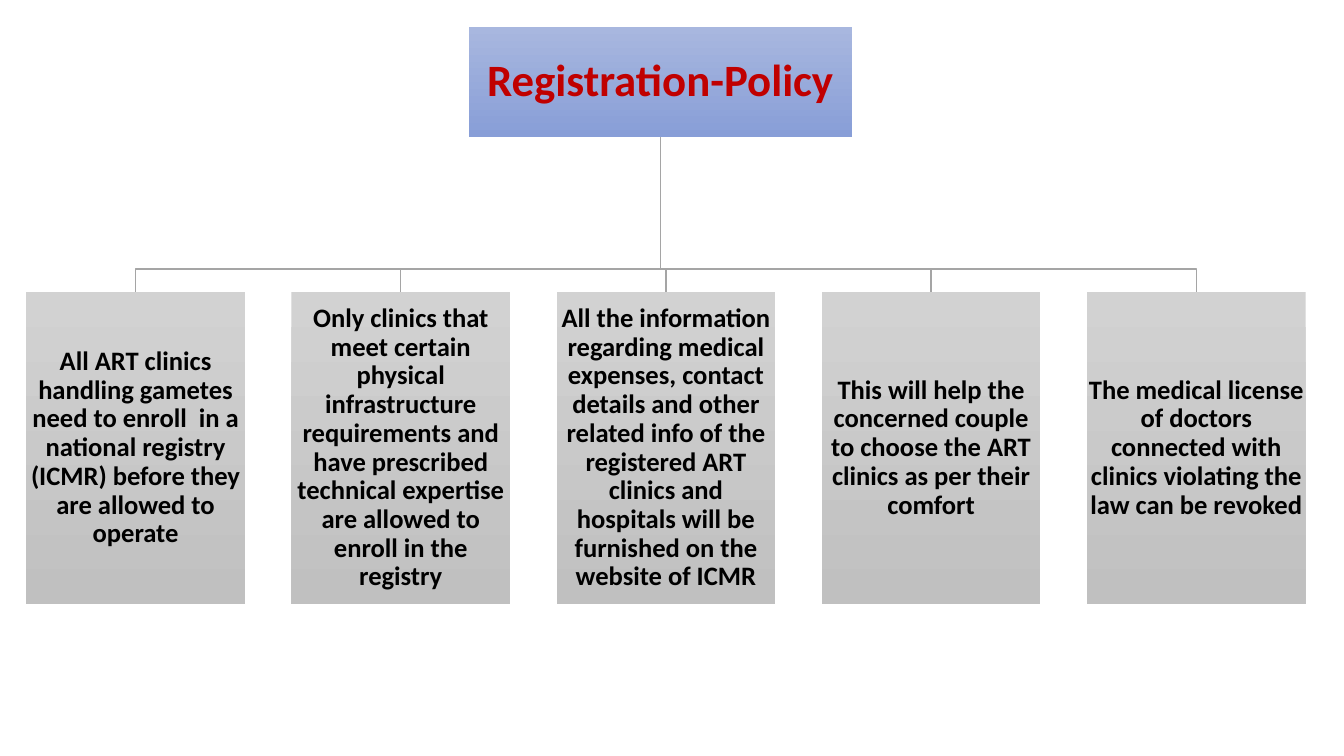
from pptx import Presentation
from pptx.dml.color import RGBColor as RGB
from pptx.enum.shapes import MSO_SHAPE as SHAPE
from pptx.enum.text import MSO_ANCHOR as ANCHOR, MSO_AUTO_SIZE as FIT, PP_ALIGN as ALIGN
from pptx.util import Inches, Pt

RED = RGB(0xC0, 0x00, 0x00)
BLACK = RGB(0x00, 0x00, 0x00)
GRAY = RGB(0xA5, 0xA5, 0xA5)
BLUES = RGB(0xA8, 0xB7, 0xDF), RGB(0x88, 0x9E, 0xD7)
GRAYS = RGB(0xD2, 0xD2, 0xD2), RGB(0xC0, 0xC0, 0xC0)

ROOT_X, ROOT_Y, ROOT_W, ROOT_H = 4.65, 0.27, 3.8, 1.09
LEFT, TOP, WIDTH, HEIGHT, STEP = 0.26, 2.9, 2.17, 3.09, 2.63
BEND = 2.67

RULES = [
    "All ART clinics handling gametes need to enroll  in a national registry (ICMR) before they are allowed to operate",
    "Only clinics that meet certain physical infrastructure requirements and have prescribed technical expertise are allowed to enroll in the registry",
    "All the information regarding medical expenses, contact details and other related info of the registered ART clinics and hospitals will be furnished on the website of ICMR",
    "This will help the concerned couple to choose the ART clinics as per their comfort",
    "The medical license of doctors connected with clinics violating the law can be revoked",
]


def write(shape, text, size, color, inset):
    frame = shape.text_frame
    frame.word_wrap = True
    frame.auto_size = FIT.NONE
    frame.vertical_anchor = ANCHOR.MIDDLE
    frame.margin_left = frame.margin_right = Inches(inset)
    frame.margin_top = frame.margin_bottom = Inches(inset)
    para = frame.paragraphs[0]
    para.alignment = ALIGN.CENTER
    para.line_spacing = 0.9
    run = para.add_run()
    run.text = text
    font = run.font
    font.name = "Calibri"
    font.size = Pt(size)
    font.bold = True
    font.color.rgb = color


def shade(shape, colors):
    shape.fill.gradient()
    shape.fill.gradient_angle = 270
    for stop, color in zip(shape.fill.gradient_stops, colors):
        stop.color.rgb = color
    shape.line.fill.background()


def add_root(slide):
    root = slide.shapes.title
    root.left, root.top = Inches(ROOT_X), Inches(ROOT_Y)
    root.width, root.height = Inches(ROOT_W), Inches(ROOT_H)
    shade(root, BLUES)
    write(root, "Registration-Policy", size=32, color=RED, inset=0.02)


def add_link(slide, end):
    start = ROOT_X + ROOT_W / 2
    path = slide.shapes.build_freeform(Inches(start), Inches(ROOT_Y + ROOT_H))
    turns = [(start, BEND), (end, BEND), (end, TOP)]
    path.add_line_segments([(Inches(x), Inches(y)) for x, y in turns], close=False)
    link = path.convert_to_shape()
    link.shadow.inherit = False
    link.fill.background()
    link.line.color.rgb = GRAY
    link.line.width = Pt(1)


def add_rule(slide, left, text):
    box = slide.shapes.add_shape(
        SHAPE.RECTANGLE, Inches(left), Inches(TOP), Inches(WIDTH), Inches(HEIGHT))
    box.shadow.inherit = False
    shade(box, GRAYS)
    write(box, text, size=19, color=BLACK, inset=0.01)


def main():
    deck = Presentation()
    deck.slide_width, deck.slide_height = Inches(13.33), Inches(7.5)
    slide = deck.slides.add_slide(deck.slide_layouts[5])
    add_root(slide)
    for i, text in enumerate(RULES):
        left = LEFT + i * STEP
        add_link(slide, left + WIDTH / 2)
        add_rule(slide, left, text)
    deck.save("out.pptx")


if __name__ == "__main__":
    main()
